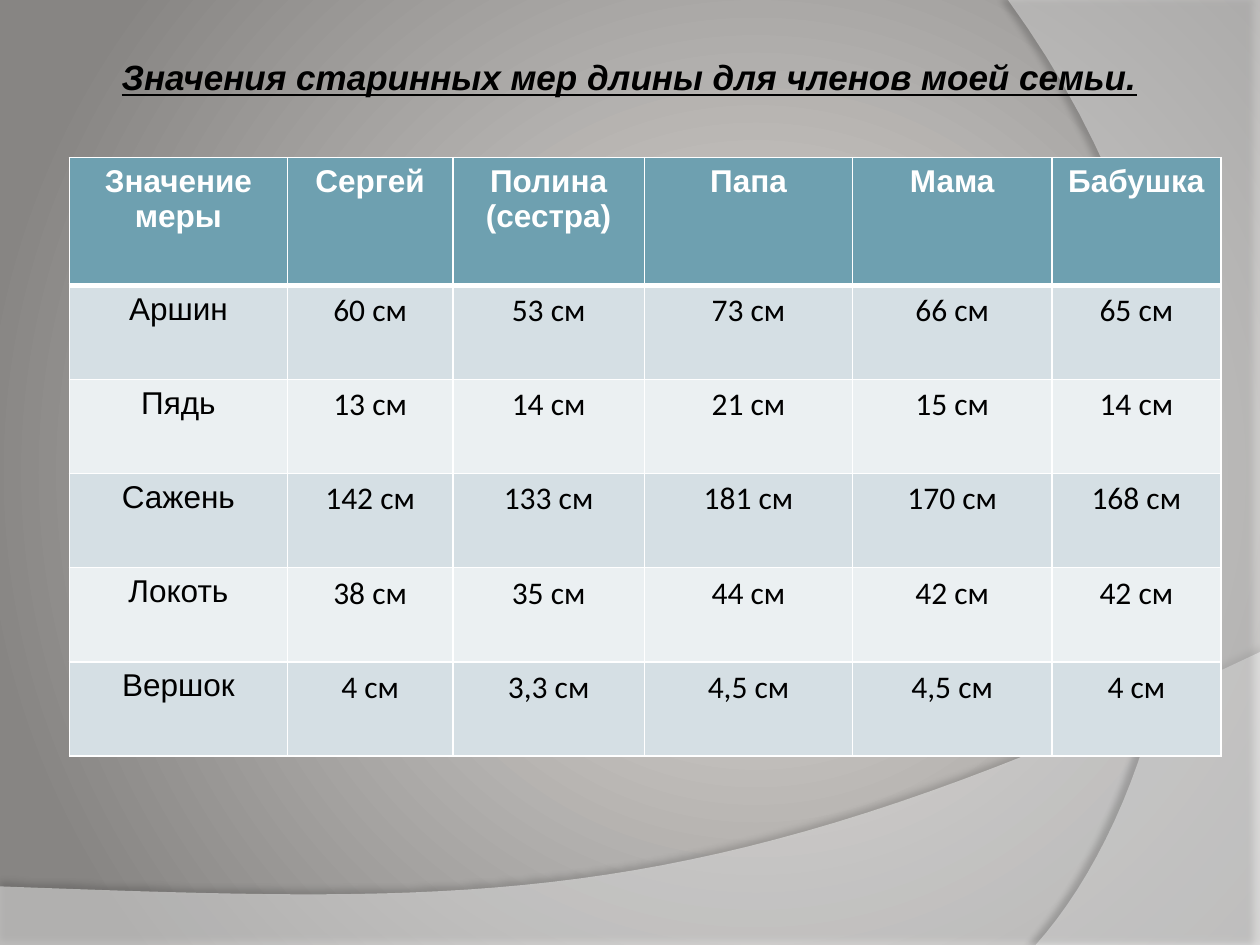
import dataclasses

import lxml.etree
import pptx
import pptx.dml.color
import pptx.enum.text
import pptx.oxml
import pptx.oxml.ns
import pptx.util

qn = pptx.oxml.ns.qn


@dataclasses.dataclass(frozen=True)
class Theme:
    """Colours, fonts and type sizes of the slide."""
    glow: str = "E0DDDA"
    shade: str = "878583"
    header: str = "6EA0B0"
    bands: tuple = ("D5DFE4", "EBF0F2")
    light: str = "FFFFFF"
    dark: str = "000000"
    label_font: str = "Arial"
    value_font: str = "Calibri"
    title_size: int = 20
    table_size: int = 18
    rule: int = 1
    header_rule: int = 3


@dataclasses.dataclass(frozen=True)
class Box:
    """A rectangle in EMU."""
    left: int
    top: int
    width: int
    height: int

    def inner(self, left, top, width, height):
        """Return the inner box given as shares of this one."""
        return Box(int(self.left + left * self.width), int(self.top + top * self.height),
                   int(width * self.width), int(height * self.height))

    def point(self, across, down):
        """Return the point at the given shares of this box."""
        return self.left + across * self.width, self.top + down * self.height


THEME = Theme()
MEASURES = [
    ("Значение\nмеры", "Сергей", "Полина\n(сестра)", "Папа", "Мама", "Бабушка"),
    ("Аршин", "60 см", "53 см", "73 см", "66 см", "65 см"),
    ("Пядь", "13 см", "14 см", "21 см", "15 см", "14 см"),
    ("Сажень", "142 см", "133 см", "181 см", "170 см", "168 см"),
    ("Локоть", "38 см", "35 см", "44 см", "42 см", "42 см"),
    ("Вершок", "4 см", "3,3 см", "4,5 см", "4,5 см", "4 см"),
]
COLUMN_WEIGHTS = (1.73, 1.31, 1.52, 1.65, 1.58, 1.34)
ROW_WEIGHTS = (1.02, 0.75, 0.75, 0.75, 0.75, 0.75)


def rgb(colour):
    """Return a colour object for a hex string."""
    return pptx.dml.color.RGBColor.from_string(colour)


def add_run(paragraph, text, font, size, colour, bold=False):
    """Add one centred, formatted run and return it."""
    paragraph.alignment = pptx.enum.text.PP_ALIGN.CENTER
    run = paragraph.add_run()
    run.text = text
    run.font.name, run.font.size, run.font.bold = font, pptx.util.Pt(size), bold
    run.font.color.rgb = rgb(colour)
    return run


def curve(start, first, second, end, steps=40):
    """Return the points of a cubic curve after its start."""
    shares = [step / steps for step in range(1, steps + 1)]
    return [tuple((1 - t) ** 3 * a + 3 * (1 - t) ** 2 * t * b + 3 * (1 - t) * t ** 2 * c + t ** 3 * d
                  for a, b, c, d in zip(start, first, second, end)) for t in shares]


def paint_background(slide):
    """Fill the background with a glow right of the centre."""
    fill = slide.background.fill
    fill.gradient()
    for stop, colour in zip(fill.gradient_stops, (THEME.glow, THEME.shade)):
        stop.color.rgb = rgb(colour)
    gradient = slide.element.find(".//" + qn("a:gradFill"))
    gradient.remove(gradient.find(qn("a:lin")))
    circle = lxml.etree.SubElement(gradient, qn("a:path"), {"path": "circle"})
    lxml.etree.SubElement(circle, qn("a:fillToRect"), l="60000", t="50000", r="40000", b="50000")


def add_sheen(slide, box, outline, opacity, shadow_opacity, distance, direction):
    """Draw a translucent white sheet with a soft shadow along its edge."""
    start, *others = [box.point(*share) for share in outline]
    builder = slide.shapes.build_freeform(*start)
    builder.add_line_segments(others, close=True)
    sheen = builder.convert_to_shape()
    sheen.fill.solid()
    sheen.fill.fore_color.rgb = rgb(THEME.light)
    sheen.line.fill.background()
    sheen.shadow.inherit = False
    properties = sheen.element.spPr
    lxml.etree.SubElement(properties.find(".//" + qn("a:srgbClr")), qn("a:alpha"), val=str(opacity * 1000))
    shadow = lxml.etree.SubElement(
        properties.find(qn("a:effectLst")), qn("a:outerShdw"), blurRad=str(pptx.util.Pt(4)),
        dist=str(pptx.util.Pt(distance)), dir=str(direction * 60000), algn="ctr", rotWithShape="0")
    tint = lxml.etree.SubElement(shadow, qn("a:srgbClr"), val=THEME.dark)
    lxml.etree.SubElement(tint, qn("a:alpha"), val=str(shadow_opacity * 1000))


def add_backdrop(slide, page):
    """Draw the bottom wave and the right-hand arc."""
    wave = [(0, 0.8), (0, 1), (1, 1), (1, 0)] + curve((1, 0), (0.56, 0.9), (0.39, 0.86), (0, 0.8))
    arc = [(1, 0), (1, 1), (0.11, 1)] + curve((0.11, 1), (0.68, 0.83), (1.09, 0.4), (0, 0))
    add_sheen(slide, page.inner(0, 0.69, 1, 0.31), wave, 45, 35, 3.5, 270)
    add_sheen(slide, page.inner(0.8, 0, 0.2, 1), arc, 40, 45, 4, 180)


def add_title(slide, box):
    """Place the heading in the title placeholder, above the backdrop."""
    title = slide.shapes.title
    title.element.getparent().append(title.element)
    title.left, title.top, title.width, title.height = dataclasses.astuple(box)
    frame = title.text_frame
    frame.word_wrap = True
    frame.auto_size = pptx.enum.text.MSO_AUTO_SIZE.SHAPE_TO_FIT_TEXT
    frame.vertical_anchor = pptx.enum.text.MSO_ANCHOR.MIDDLE
    heading = add_run(frame.paragraphs[0], "Значения старинных мер длины для членов моей семьи.",
                      THEME.label_font, THEME.title_size, THEME.dark, True)
    heading.font.italic = heading.font.underline = True


def rule_cell(cell, top, bottom):
    """Draw the white borders of a cell."""
    properties = cell._tc.get_or_add_tcPr()
    for side, width in (("L", THEME.rule), ("R", THEME.rule), ("T", top), ("B", bottom)):
        border = lxml.etree.SubElement(properties, qn("a:ln" + side), w=str(pptx.util.Pt(width)))
        solid = lxml.etree.SubElement(border, qn("a:solidFill"))
        lxml.etree.SubElement(solid, qn("a:srgbClr"), val=THEME.light)


def fill_cell(cell, text, row, column):
    """Write and format one cell according to its place."""
    is_header = row == 0
    rule_cell(cell, THEME.header_rule if row == 1 else THEME.rule,
              THEME.header_rule if is_header else THEME.rule)
    cell.fill.solid()
    cell.fill.fore_color.rgb = rgb(THEME.header if is_header else THEME.bands[(row - 1) % 2])
    font = THEME.label_font if is_header or column == 0 else THEME.value_font
    colour = THEME.light if is_header else THEME.dark
    for index, line in enumerate(text.split("\n")):
        paragraph = cell.text_frame.add_paragraph() if index else cell.text_frame.paragraphs[0]
        add_run(paragraph, line, font, THEME.table_size, colour, is_header)


def add_measures(slide, box):
    """Place the table of measures for each family member."""
    table = slide.shapes.add_table(len(ROW_WEIGHTS), len(COLUMN_WEIGHTS),
                                   *dataclasses.astuple(box)).table
    for column, weight in zip(table.columns, COLUMN_WEIGHTS):
        column.width = int(box.width * weight / sum(COLUMN_WEIGHTS))
    for row, weight in zip(table.rows, ROW_WEIGHTS):
        row.height = int(box.height * weight / sum(ROW_WEIGHTS))
    for row, texts in enumerate(MEASURES):
        for column, text in enumerate(texts):
            fill_cell(table.cell(row, column), text, row, column)


def main():
    """Build the slide and save it."""
    deck = pptx.Presentation()
    deck.slide_width, deck.slide_height = pptx.util.Inches(10), pptx.util.Inches(7.5)
    page = Box(0, 0, deck.slide_width, deck.slide_height)
    grid = Box(0, 0, page.width // 10, page.width // 10)
    slide = deck.slides.add_slide(deck.slide_layouts.get_by_name("Title Only"))
    paint_background(slide)
    add_backdrop(slide, page)
    add_title(slide, grid.inner(0.7, 0.39, 8.59, 0.44))
    add_measures(slide, grid.inner(0.55, 1.25, 9.14, 4.75))
    deck.save("out.pptx")


if __name__ == "__main__":
    main()
